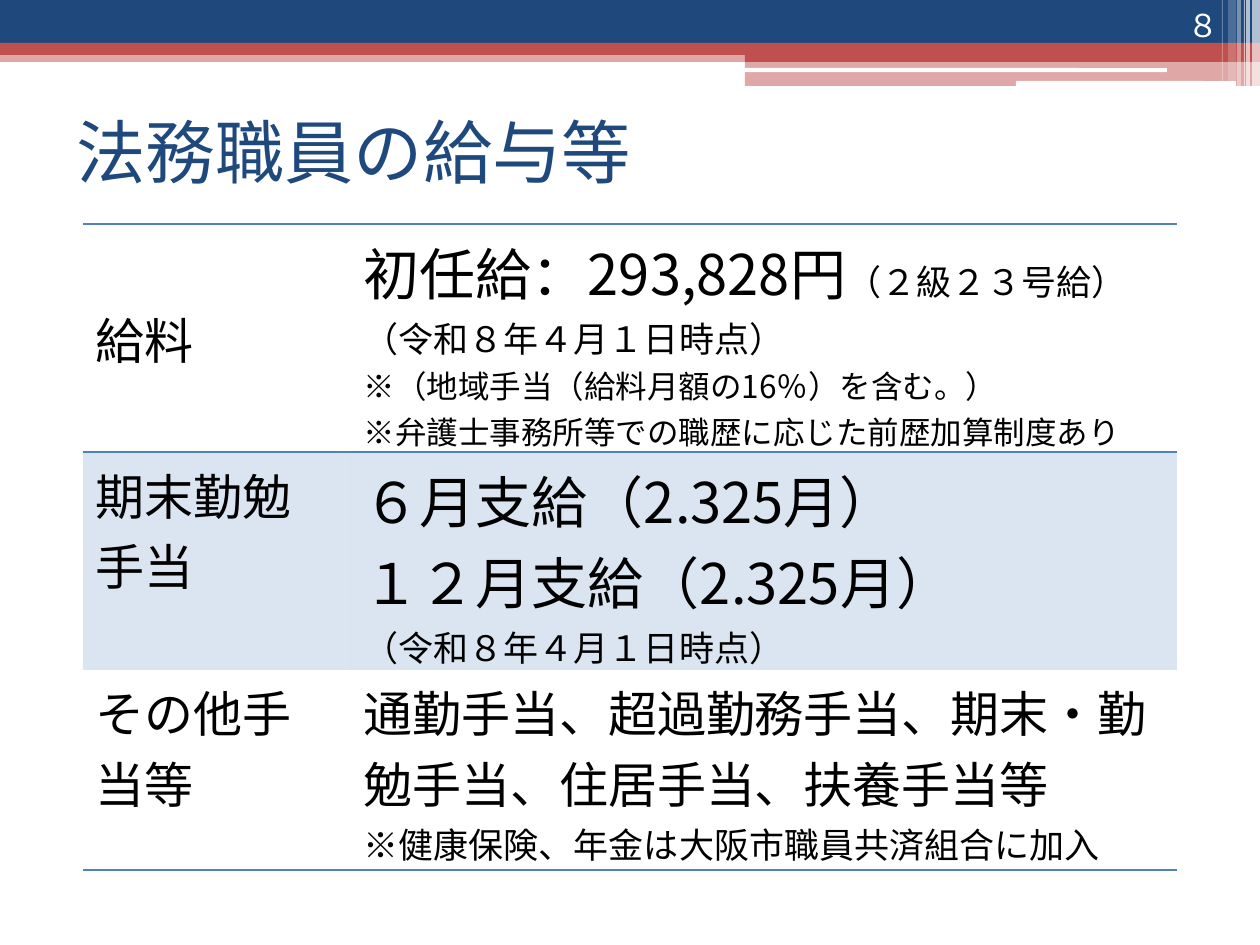
from dataclasses import dataclass
from typing import NamedTuple

from lxml import etree
from pptx import Presentation
from pptx.dml.color import RGBColor
from pptx.enum.shapes import MSO_SHAPE
from pptx.enum.text import MSO_ANCHOR, PP_ALIGN
from pptx.oxml.ns import qn
from pptx.util import Emu, Pt

RECT = MSO_SHAPE.RECTANGLE
ROUNDED = MSO_SHAPE.ROUNDED_RECTANGLE
TOP, MIDDLE, BOTTOM = MSO_ANCHOR.TOP, MSO_ANCHOR.MIDDLE, MSO_ANCHOR.BOTTOM
LEFT, RIGHT = PP_ALIGN.LEFT, PP_ALIGN.RIGHT

PX_PER_INCH = 126
COLORS = {
    "navy": "1F497D",
    "red": "C0504D",
    "blue": "4F81BD",
    "white": "FFFFFF",
    "black": "000000",
}
LABEL_FONT = "Cambria"
TITLE_FONT = "Roboto"
DETAIL_FONT = "Noto Sans CJK JP"
PLAIN_TABLE_STYLE = "{2D5ABB26-0587-4C30-8999-92F81FD0307C}"


class Box(NamedTuple):
    left: int
    top: int
    width: int
    height: int


class Span(NamedTuple):
    text: str
    size: float
    font: str = DETAIL_FONT
    color: str = "black"


@dataclass
class Band:
    box: Box
    color: str
    opacity: int = 100
    outline: int = RECT


@dataclass
class PayRow:
    label: str
    details: list[list[Span]]
    height: int
    anchor: int = TOP
    shaded: bool = False
    borders: tuple[str, ...] = ()


BANDS = [
    Band(Box(0, 50, 1260, 12), "red", 50),
    Band(Box(0, 0, 1260, 43), "navy"),
    Band(Box(0, 43, 1260, 12), "red"),
    Band(Box(745, 49, 515, 13), "red"),
    Band(Box(745, 61, 515, 25), "red", 50),
    Band(Box(745, 68, 422, 4), "white", 100, ROUNDED),
    Band(Box(1016, 81, 220, 5), "white", 100, ROUNDED),
    Band(Box(1252, 0, 8, 86), "white", 65),
    Band(Box(1246, 0, 4, 86), "white", 65),
    Band(Box(1244, 0, 1, 86), "white", 60),
    Band(Box(1237, 0, 4, 86), "white", 40),
    Band(Box(1228, 0, 8, 81), "white", 20),
    Band(Box(1222, 0, 1, 81), "white", 30),
]

AS_OF = [Span("（令和８年４月１日時点）", 20)]
PAY_ROWS = [
    PayRow("給料", [
        [Span("初任給：293,828円", 32), Span("（２級２３号給）", 20)],
        AS_OF,
        [Span("※（地域手当（給料月額の16％）を含む。）", 18)],
        [Span("※弁護士事務所等での職歴に応じた前歴加算制度あり", 18)],
    ], 228, anchor=MIDDLE, borders=("a:lnT", "a:lnB")),
    PayRow("期末勤勉手当", [
        [Span("６月支給（2.325月）", 32)],
        [Span("１２月支給（2.325月）", 32)],
        AS_OF,
    ], 218, shaded=True),
    PayRow("その他手当等", [
        [Span("通勤手当、超過勤務手当、期末・勤勉手当、住居手当、扶養手当等", 28)],
        [Span("※健康保険、年金は大阪市職員共済組合に加入", 20)],
    ], 200, borders=("a:lnB",)),
]
COLUMN_WIDTHS = (268, 826)


def px(length: int) -> Emu:
    return Emu(round(length * 914400 / PX_PER_INCH))


def place(box: Box) -> list[Emu]:
    return [px(length) for length in box]


def rgb(color: str) -> RGBColor:
    return RGBColor.from_string(COLORS[color])


def paint(fill, element, color: str, opacity: int) -> None:
    fill.solid()
    fill.fore_color.rgb = rgb(color)
    if opacity < 100:
        tint = next(element.iter(qn("a:srgbClr")))
        etree.SubElement(tint, qn("a:alpha")).set("val", str(opacity * 1000))


def write(frame, lines: list[list[Span]], align: int = LEFT) -> None:
    frame.word_wrap = True
    for index, line in enumerate(lines):
        paragraph = frame.add_paragraph() if index else frame.paragraphs[0]
        paragraph.alignment = align
        for span in line:
            run = paragraph.add_run()
            run.text = span.text
            run.font.size = Pt(span.size)
            run.font.color.rgb = rgb(span.color)
            run.font.name = span.font
            east_asian = etree.SubElement(run.font._element, qn("a:ea"))
            east_asian.set("typeface", DETAIL_FONT)


def draw_band(slide, band: Band) -> None:
    bar = slide.shapes.add_shape(band.outline, *place(band.box))
    bar.shadow.inherit = False
    bar.line.fill.background()
    paint(bar.fill, bar._element.spPr, band.color, band.opacity)


def draw_borders(cell, sides: tuple[str, ...]) -> None:
    for index, side in enumerate(sides):
        border = etree.Element(qn(side), w=str(Pt(1)))
        ink = etree.SubElement(border, qn("a:solidFill"))
        etree.SubElement(ink, qn("a:srgbClr"), val=COLORS["blue"])
        cell._tc.get_or_add_tcPr().insert(index, border)


def draw_pay_table(slide, rows: list[PayRow]) -> None:
    box = Box(83, 224, sum(COLUMN_WIDTHS), sum(row.height for row in rows))
    table = slide.shapes.add_table(len(rows), len(COLUMN_WIDTHS), *place(box)).table
    table.first_row = table.horz_banding = False
    table._tbl.tblPr.find(qn("a:tableStyleId")).text = PLAIN_TABLE_STYLE
    for column, width in zip(table.columns, COLUMN_WIDTHS):
        column.width = px(width)
    for index, row in enumerate(rows):
        table.rows[index].height = px(row.height)
        contents = ([[Span(row.label, 28, LABEL_FONT)]], row.details)
        for cell, lines in zip(table.rows[index].cells, contents):
            write(cell.text_frame, lines)
            cell.vertical_anchor = row.anchor
            if row.shaded:
                paint(cell.fill, cell._tc.tcPr, "blue", 20)
            else:
                cell.fill.background()
            draw_borders(cell, row.borders)


def main() -> None:
    deck = Presentation()
    deck.slide_width, deck.slide_height = px(1260), px(945)
    slide = deck.slides.add_slide(deck.slide_layouts[5])

    for band in BANDS:
        draw_band(slide, band)

    title = slide.shapes.title
    title.left, title.top, title.width, title.height = place(Box(64, 106, 1150, 90))
    title.text_frame.vertical_anchor = MIDDLE
    write(title.text_frame, [[Span("法務職員の給与等", 39.6, TITLE_FONT, "navy")]])

    page_number = slide.shapes.add_textbox(*place(Box(1126, 0, 105, 50))).text_frame
    page_number.vertical_anchor = BOTTOM
    write(page_number, [[Span("８", 18, LABEL_FONT, "white")]], RIGHT)

    draw_pay_table(slide, PAY_ROWS)
    deck.save("out.pptx")


if __name__ == "__main__":
    main()
